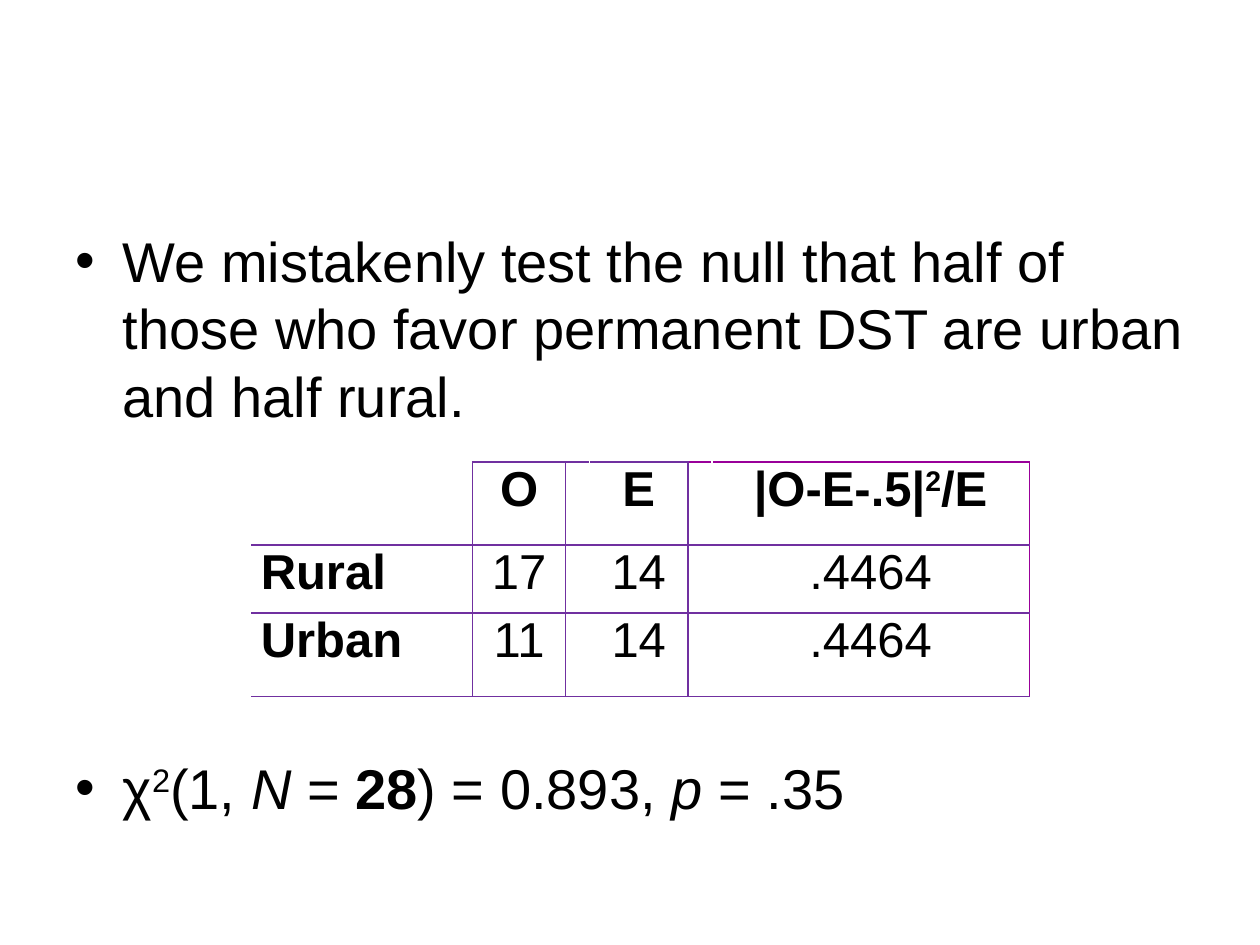
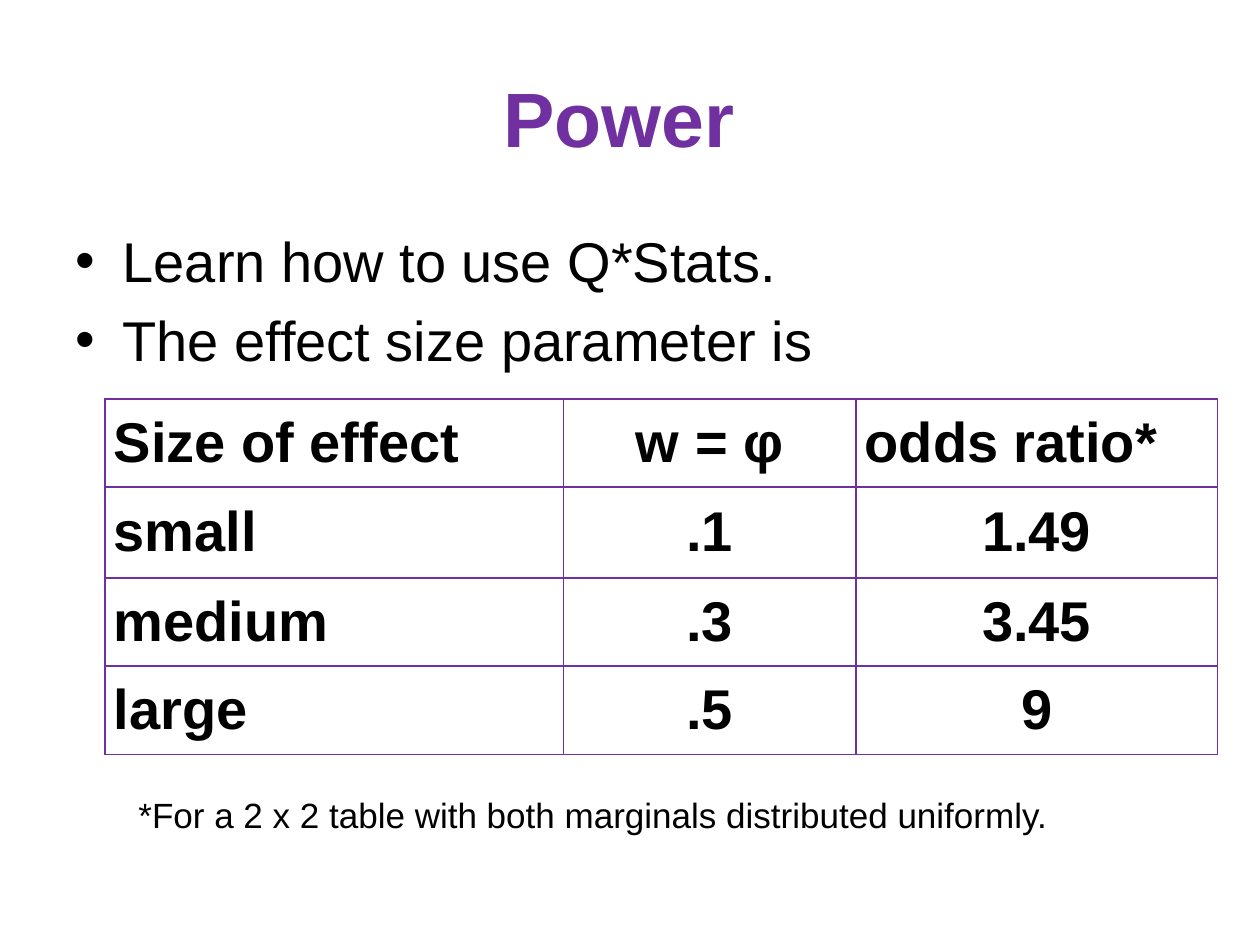
from dataclasses import dataclass

from lxml.etree import SubElement
from pptx import Presentation
from pptx.dml.color import RGBColor
from pptx.enum.text import MSO_ANCHOR, PP_ALIGN
from pptx.oxml.ns import qn
from pptx.util import Emu, Inches, Pt


@dataclass(frozen=True)
class Theme:
    font: str = "Arial"
    ink: str = "000000"
    purple: str = "7030A0"
    magenta: str = "990099"
    white: str = "FFFFFF"
    title: int = 44
    body: int = 32
    cell: int = 28
    note: int = 20
    bullet_gap: float = 6.4
    cell_gap: int = 3
    rule: int = 1


T = Theme()
LEFT, CENTER = PP_ALIGN.LEFT, PP_ALIGN.CENTER

prs = Presentation()
prs.slide_width, prs.slide_height = Inches(10), Inches(7.5)
U = prs.slide_width / 120  # square grid: 120 columns by 90 rows
BODY = (6, 21, 108, 59.4)


def write(tf, *runs, size=T.body, color=T.ink, bold=False, align=LEFT,
          before=0, after=0, bullet=False):
    """Add a paragraph; a run is a string or (string, "bold" | "italic" | "super")."""
    p = tf.paragraphs[0] if not tf.text else tf.add_paragraph()
    p.alignment, p.space_before, p.space_after = align, Pt(before), Pt(after)
    if bullet:
        pPr = p._p.get_or_add_pPr()
        pPr.set("marL", str(int(4.5 * U)))
        pPr.set("indent", str(int(-4.5 * U)))
        SubElement(pPr, qn("a:buFont"), typeface=T.font)
        SubElement(pPr, qn("a:buChar"), char="•")
    for run in runs:
        text, style = (run, "") if isinstance(run, str) else run
        r = p.add_run()
        r.text = text
        r.font.name, r.font.size = T.font, Pt(size)
        r.font.color.rgb = RGBColor.from_string(color)
        r.font.bold = bold or style == "bold"
        r.font.italic = style == "italic"
        if style == "super":
            r._r.get_or_add_rPr().set("baseline", "30000")


def add_grid(s, left, top, cols, rows, cells, borders, anchor, **fmt):
    """Add a table; cells maps (row, column) to runs and format, borders gives L, R, T, B colours."""
    size = [Emu(int(n * U)) for n in (left, top, sum(cols), sum(rows))]
    table = s.shapes.add_table(len(rows), len(cols), *size).table
    table.first_row = table.horz_banding = False
    for col, width in zip(table.columns, cols):
        col.width = Emu(int(width * U))
    for i, height in enumerate(rows):
        table.rows[i].height = Emu(int(height * U))
        for j in range(len(cols)):
            cell = table.cell(i, j)
            cell.vertical_anchor = anchor
            cell.margin_left = cell.margin_right = Inches(0.07)
            cell.margin_top = cell.margin_bottom = 0
            tcPr = cell._tc.get_or_add_tcPr()
            for side, color in zip("LRTB", borders(i, j)):
                ln = SubElement(tcPr, qn(f"a:ln{side}"), w=str(Pt(T.rule)))
                SubElement(SubElement(ln, qn("a:solidFill")), qn("a:srgbClr"), val=color)
            cell.fill.background()
            if (i, j) in cells:
                runs, own = cells[i, j]
                write(cell.text_frame, *runs, before=T.cell_gap, after=T.cell_gap,
                      **{**fmt, **own})


slides = []
for boxes in (
    [(BODY, MSO_ANCHOR.TOP)],
    [((6, 3.6, 108, 15), MSO_ANCHOR.MIDDLE), (BODY, MSO_ANCHOR.TOP),
     ((12, 75, 93, 8.88), MSO_ANCHOR.TOP)],
):
    s = prs.slides.add_slide(prs.slide_layouts[6])
    frames = []
    for box, anchor in boxes:
        tf = s.shapes.add_textbox(*[Emu(int(n * U)) for n in box]).text_frame
        tf.word_wrap, tf.vertical_anchor = True, anchor
        frames.append(tf)
    slides.append((s, frames))

# Slide 1: chi-square test of the mistaken null
s, (body,) = slides[0]
write(body, "We mistakenly test the null that half of those who favor permanent "
      "DST are urban and half rural.", bullet=True, before=T.bullet_gap)
write(body, "χ", ("2", "super"), "(1, ", ("N", "italic"), " = ", ("28", "bold"),
      ") = 0.893, ", ("p", "italic"), " = .35", bullet=True, before=185.6)

cells = {(0, 1): (["O"], {"bold": True}),
         (0, 3): (["E"], {"bold": True}),
         (0, 5): (["|O-E-.5|", ("2", "super"), "/E"], {"bold": True})}
for i, (place, *values) in enumerate([("Rural", "17", "14", ".4464"),
                                      ("Urban", "11", "14", ".4464")], 1):
    cells[i, 0] = [place], {"bold": True, "align": LEFT}
    for j, value in zip((1, 3, 5), values):
        cells[i, j] = [value], {}


def test_borders(i, j):
    left = T.white if j in (0, 3, 5) else T.purple
    right = T.white if j in (2, 4) else T.magenta if j == 5 else T.purple
    top = T.purple
    if i == 0:
        top = T.white if j == 0 else T.magenta if j > 3 else T.purple
    return left, right, top, T.purple


add_grid(s, 24, 44, [21, 8.88, 2.28, 9.36, 2.28, 30.24], [7.92, 6.48, 7.92],
         cells, test_borders, MSO_ANCHOR.TOP, size=T.cell, align=CENTER)

# Slide 2: effect sizes for power
s, (title, body, note) = slides[1]
write(title, "Power ", size=T.title, color=T.purple, bold=True, align=CENTER)
for line in ("Learn how to use Q*Stats.", "The effect size parameter is"):
    write(body, line, bullet=True, before=T.bullet_gap)
write(note, "*For a 2 x 2 table with both marginals distributed uniformly.", size=T.note)

effects = [("Size of effect", "w = φ", "odds ratio*"),
           ("small", ".1", "1.49"),
           ("medium", ".3", "3.45"),
           ("large", ".5", "9")]
cells = {(i, j): ([text], {"align": LEFT if j == 0 or (i, j) == (0, 2) else CENTER})
         for i, row in enumerate(effects) for j, text in enumerate(row)}
add_grid(s, 10, 38, [43.68, 27.84, 34.44], [8.4, 8.64, 8.4, 8.4],
         cells, lambda i, j: [T.purple] * 4, MSO_ANCHOR.MIDDLE, bold=True)

prs.save("out.pptx")
